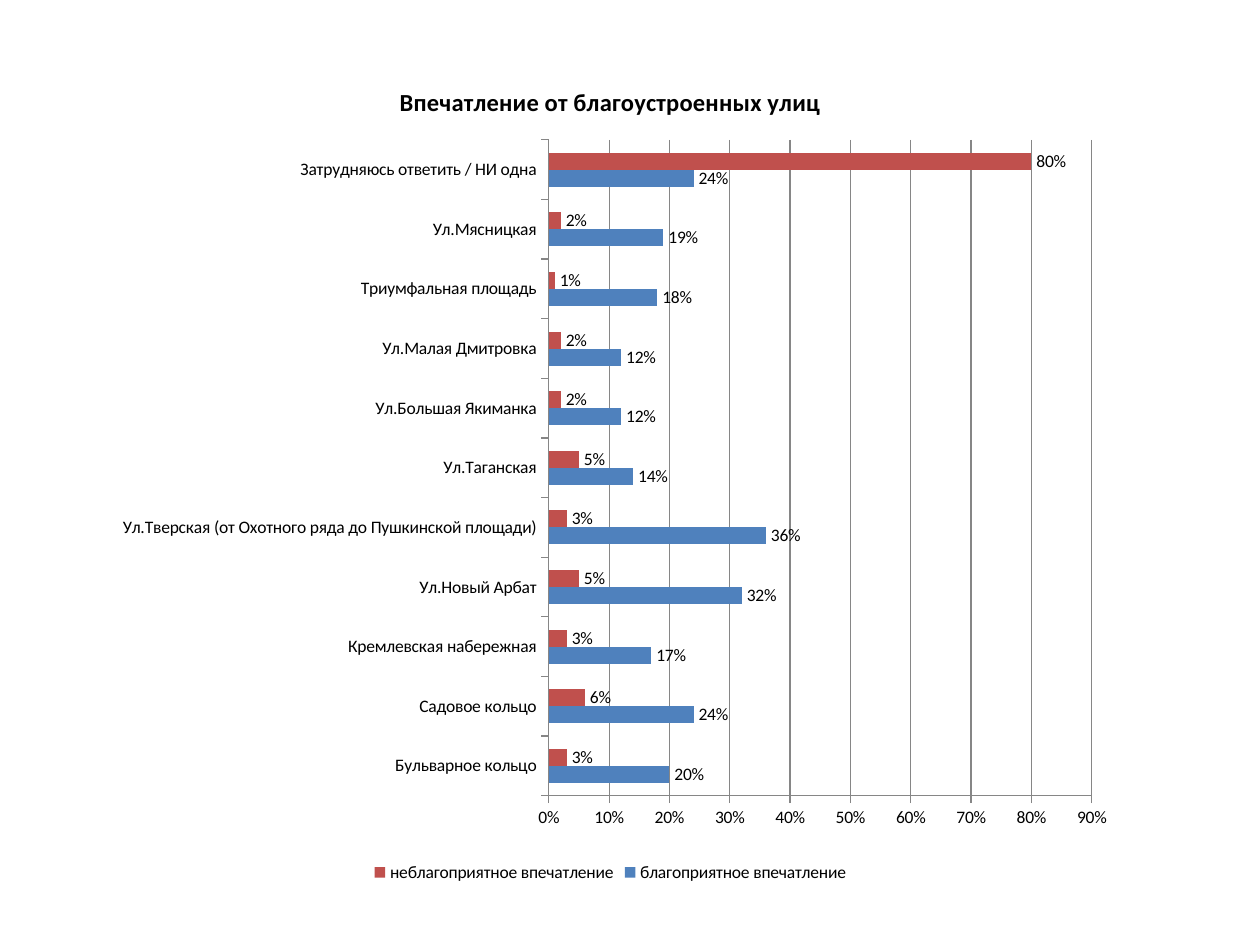
from lxml import etree
from pptx import Presentation
from pptx.chart.data import CategoryChartData
from pptx.dml.color import RGBColor
from pptx.enum.chart import XL_CHART_TYPE as ChartType
from pptx.enum.chart import XL_LABEL_POSITION as LabelPosition
from pptx.enum.chart import XL_LEGEND_POSITION as LegendPosition
from pptx.enum.chart import XL_TICK_MARK as TickMark
from pptx.oxml.ns import qn
from pptx.util import Pt

COLORS = {"text": "000000", "axis": "868686", "good": "4F81BD", "bad": "C0504D"}
PERCENT = "###0%"
RATINGS = [
    ("Бульварное кольцо", 0.20, 0.03),
    ("Садовое кольцо", 0.24, 0.06),
    ("Кремлевская набережная", 0.17, 0.03),
    ("Ул.Новый Арбат", 0.32, 0.05),
    ("Ул.Тверская (от Охотного ряда до Пушкинской площади)", 0.36, 0.03),
    ("Ул.Таганская", 0.14, 0.05),
    ("Ул.Большая Якиманка", 0.12, 0.02),
    ("Ул.Малая Дмитровка", 0.12, 0.02),
    ("Триумфальная площадь", 0.18, 0.01),
    ("Ул.Мясницкая", 0.19, 0.02),
    ("Затрудняюсь ответить / НИ одна", 0.24, 0.80),
]


def color(name):
    return RGBColor.from_string(COLORS[name])


deck = Presentation()
deck.slide_width, deck.slide_height = Pt(720), Pt(540)
page = deck.slides.add_slide(deck.slide_layouts[6])

streets, good, bad = zip(*RATINGS)
data = CategoryChartData(number_format=PERCENT)
data.categories = streets
data.add_series("благоприятное впечатление", good)
data.add_series("неблагоприятное впечатление", bad)
chart = page.shapes.add_chart(
    ChartType.BAR_CLUSTERED, Pt(56), Pt(32.5), Pt(585.5), Pt(474.5), data
).chart
chart.font.name = "Calibri"
chart.font.size = Pt(10)
chart.font.color.rgb = color("text")

chart.has_title = True
chart.chart_title.include_in_layout = False
heading = chart.chart_title.text_frame.paragraphs[0]
heading.text = "Впечатление от благоустроенных улиц"
heading.font.name = "Calibri"
heading.font.size = Pt(14)
heading.font.bold = True
heading.font.color.rgb = color("text")

chart.has_legend = True
chart.legend.position = LegendPosition.BOTTOM
chart.legend.include_in_layout = False

plot = chart.plots[0]
plot.gap_width = 150
plot.overlap = 0
plot.vary_by_categories = False
for series, name in zip(plot.series, ("good", "bad")):
    series.format.fill.solid()
    series.format.fill.fore_color.rgb = color(name)
    labels = series.data_labels
    labels.show_value = True
    labels.number_format = PERCENT
    labels.number_format_is_linked = False
    labels.position = LabelPosition.OUTSIDE_END

for axis in (chart.category_axis, chart.value_axis):
    axis.major_tick_mark = TickMark.OUTSIDE
    axis.minor_tick_mark = TickMark.NONE
    axis.format.line.color.rgb = color("axis")
    axis.format.line.width = Pt(0.75)

scale = chart.value_axis
scale.minimum_scale, scale.maximum_scale, scale.major_unit = 0, 0.9, 0.1
scale.tick_labels.number_format = PERCENT
scale.tick_labels.number_format_is_linked = False
scale.has_major_gridlines = True
scale.major_gridlines.format.line.color.rgb = color("axis")
scale.major_gridlines.format.line.width = Pt(0.75)

area = chart.element.find(".//" + qn("c:plotArea"))
for layout in area.findall(qn("c:layout")):
    area.remove(layout)
layout = etree.Element(qn("c:layout"))
area.insert(0, layout)
manual = etree.SubElement(layout, qn("c:manualLayout"))
for tag, value in (
    ("layoutTarget", "inner"), ("xMode", "edge"), ("yMode", "edge"),
    ("x", "0.44"), ("y", "0.1"), ("w", "0.53"), ("h", "0.79"),
):
    etree.SubElement(manual, qn("c:" + tag)).set("val", value)

deck.save("out.pptx")
